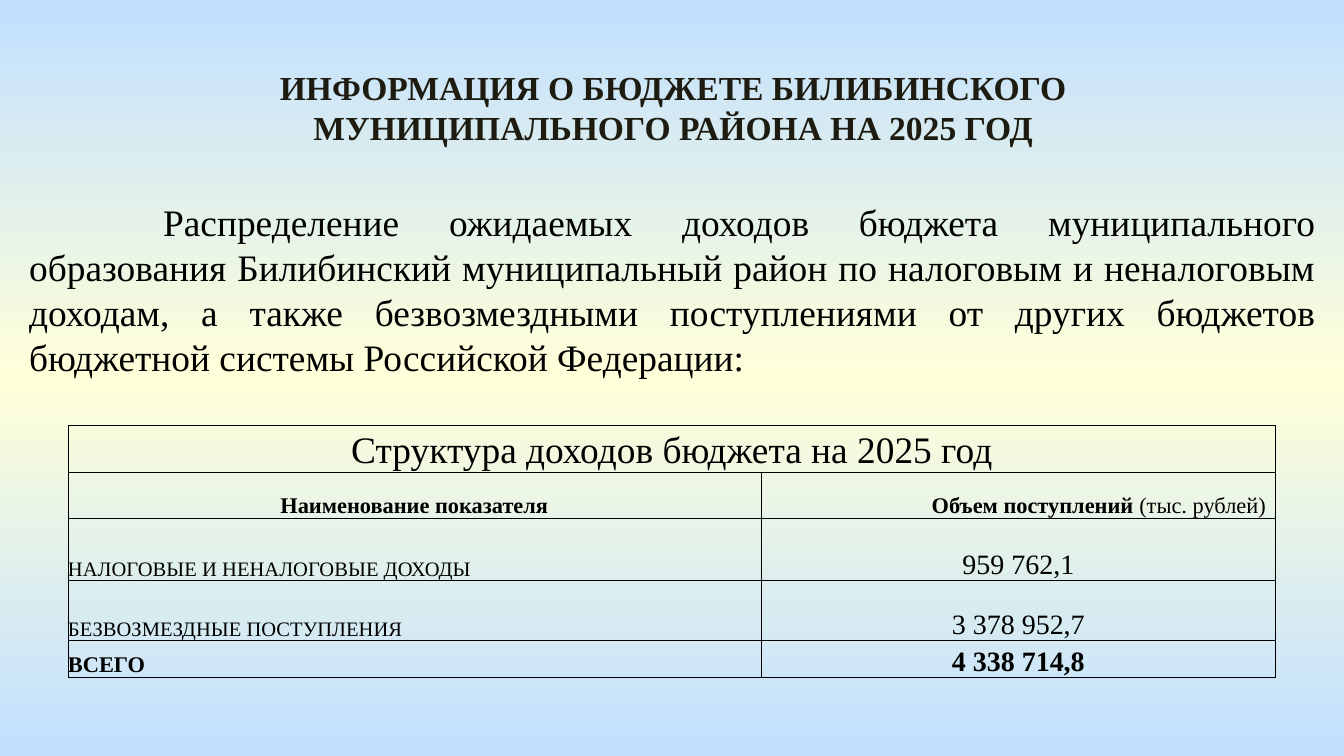
from copy import deepcopy
from dataclasses import dataclass

from lxml import etree
from pptx import Presentation
from pptx.dml.color import RGBColor
from pptx.enum import shapes, text
from pptx.oxml.ns import qn
from pptx.util import Pt

PX = 9144000 / 1344
LEFT, CENTER, RIGHT, JUSTIFY = (
    text.PP_ALIGN.LEFT, text.PP_ALIGN.CENTER, text.PP_ALIGN.RIGHT, text.PP_ALIGN.JUSTIFY)


@dataclass(frozen=True)
class Theme:
    font: str = "Times New Roman"
    ink: str = "000000"
    title_ink: str = "1E1C11"
    sky: str = "C1E0FF"
    cream: str = "FFFFD9"
    title: int = 18
    body: int = 20
    head: int = 12
    label: int = 11
    value: int = 15
    border: float = 0.5


theme = Theme()


def px(n):
    return round(n * PX)


def write(tf, words, size, align, bold=False, color=theme.ink):
    p = tf.paragraphs[0]
    for part in words.split("|"):
        p.add_run().text = part
    p.alignment = align
    p.font.name, p.font.size, p.font.bold = theme.font, Pt(size), bold
    p.font.color.rgb = RGBColor.from_string(color)
    return p


prs = Presentation()
prs.slide_width, prs.slide_height = px(1344), px(756)
s = prs.slides.add_slide(prs.slide_layouts[6])

# Background: sky, cream, sky from top to bottom
fill = s.background.fill
fill.gradient()
fill.gradient_angle = 270
for stop in fill.gradient_stops:
    stop.color.rgb = RGBColor.from_string(theme.sky)
first = next(s.element.iter(qn("a:gs")))
middle = deepcopy(first)
middle.set("pos", "50000")
middle[0].set("val", theme.cream)
first.addnext(middle)

# Introduction: a rectangle that shows the slide background
sp = s.shapes.add_shape(shapes.MSO_SHAPE.RECTANGLE, px(16), px(193), px(1313), px(195))
sp.shadow.inherit = False
sp._element.remove(sp._element.find(qn("p:style")))
sp._element.set("useBgFill", "1")
intro = sp.text_frame
intro.word_wrap = True
intro.vertical_anchor = text.MSO_ANCHOR.TOP
p = write(intro, "Распределение ожидаемых доходов бюджета муниципального образования "
          "Билибинский муниципальный район по налоговым и неналоговым доходам, а также "
          "безвозмездными поступлениями от других бюджетов бюджетной системы "
          "Российской Федерации:", theme.body, JUSTIFY)
p._p.get_or_add_pPr().set("indent", str(px(134)))

# Title
title = s.shapes.add_textbox(px(154), px(60), px(1039), px(95)).text_frame
title.word_wrap = True
write(title, "ИНФОРМАЦИЯ О БЮДЖЕТЕ БИЛИБИНСКОГО МУНИЦИПАЛЬНОГО РАЙОНА НА 2025 ГОД",
      theme.title, CENTER, True, theme.title_ink)

# Revenue table: words, size, alignment, bold
rows = [
    (47, [("Структура доходов бюджета на 2025 год", theme.body, CENTER, False)]),
    (46, [("Наименование показателя", theme.head, CENTER, True),
          ("Объем поступлений |(тыс. рублей)", theme.head, RIGHT, True)]),
    (63, [("НАЛОГОВЫЕ И НЕНАЛОГОВЫЕ ДОХОДЫ", theme.label, LEFT, False),
          ("959 762,1", theme.value, CENTER, False)]),
    (60, [("БЕЗВОЗМЕЗДНЫЕ ПОСТУПЛЕНИЯ", theme.label, LEFT, False),
          ("3 378 952,7", theme.value, CENTER, False)]),
    (37, [("ВСЕГО", theme.head, LEFT, True),
          ("4 338 714,8", theme.value, CENTER, True)]),
]
widths = [693, 515]
table = s.shapes.add_table(len(rows), len(widths), px(68), px(425),
                           px(sum(widths)), px(sum(h for h, _ in rows))).table
table.first_row = table.horz_banding = False
for column, width in zip(table.columns, widths):
    column.width = px(width)
table.cell(0, 0).merge(table.cell(0, 1))

for row, (height, entries) in zip(table.rows, rows):
    row.height = px(height)
    for cell, entry in zip(row.cells, entries):
        write(cell.text_frame, *entry)
    for cell in row.cells:
        cell.vertical_anchor = text.MSO_ANCHOR.BOTTOM
        cell.margin_left = cell.margin_right = cell.margin_top = cell.margin_bottom = 0
        tcPr = cell._tc.get_or_add_tcPr()
        for side in ("a:lnL", "a:lnR", "a:lnT", "a:lnB"):
            ln = etree.SubElement(tcPr, qn(side), w=str(Pt(theme.border)))
            solid = etree.SubElement(ln, qn("a:solidFill"))
            etree.SubElement(solid, qn("a:srgbClr"), val=theme.ink)
        cell.fill.background()

# Unit note in the heading row is lighter and set in from the edge
volume = table.cell(1, 1)
volume.margin_left = volume.margin_right = px(10)
volume.text_frame.paragraphs[0].runs[1].font.bold = False

prs.save("out.pptx")
